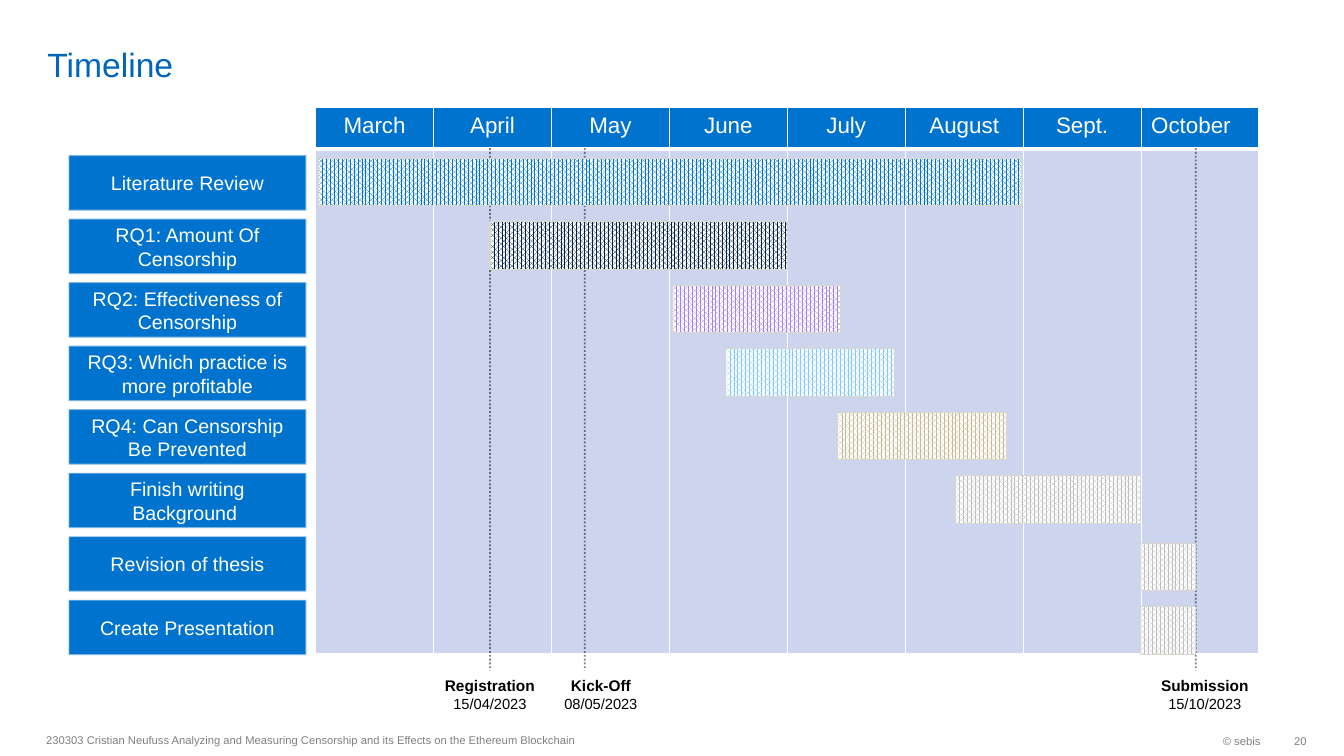
from dataclasses import dataclass

from lxml import etree
from pptx import Presentation
from pptx.dml.color import RGBColor
from pptx.enum.dml import MSO_LINE, MSO_PATTERN
from pptx.enum.shapes import MSO_CONNECTOR, MSO_SHAPE
from pptx.enum.text import MSO_ANCHOR, MSO_AUTO_SIZE, PP_ALIGN
from pptx.oxml.ns import qn
from pptx.util import Inches, Pt

LEFT, CENTER, RIGHT = PP_ALIGN.LEFT, PP_ALIGN.CENTER, PP_ALIGN.RIGHT
MIDDLE, BOTTOM = MSO_ANCHOR.MIDDLE, MSO_ANCHOR.BOTTOM
RECTANGLE = MSO_SHAPE.RECTANGLE
STRAIGHT = MSO_CONNECTOR.STRAIGHT
DOTTED = MSO_LINE.ROUND_DOT
DENSE_DOTS = MSO_PATTERN.PERCENT_75


@dataclass(frozen=True)
class Theme:
    font: str = "Arial"
    title: str = "0065BD"
    blue: str = "0073CF"
    navy: str = "002143"
    purple: str = "A484EB"
    sky: str = "86C9FF"
    sand: str = "C4BD97"
    silver: str = "C0C0C0"
    month: str = "CCD5ED"
    bar_edge: str = "DAD7CB"
    label_edge: str = "F9F9F9"
    footer: str = "808080"
    white: str = "FFFFFF"
    black: str = "000000"
    title_size: float = 24
    month_size: float = 16
    label_size: float = 14
    milestone_size: float = 11
    date_size: float = 10.5
    footer_size: float = 8


THEME = Theme()


def write(para, text, *, size, color, bold=False, align=LEFT):
    para.alignment = align
    span = para.add_run()
    span.text = text
    span.font.name = THEME.font
    span.font.size = Pt(size)
    span.font.bold = bold
    span.font.color.rgb = RGBColor.from_string(color)


def draw_faded_line(shape, color):
    """Give the shape a half-transparent outline."""
    shape.line.color.rgb = RGBColor.from_string(color)
    shape.line.width = Pt(1.35)
    tint = shape._element.spPr.find(".//" + qn("a:ln") + "//" + qn("a:srgbClr"))
    etree.SubElement(tint, qn("a:alpha")).set("val", "50000")


deck = Presentation()
deck.slide_width, deck.slide_height = Inches(13.33), Inches(7.5)
page = deck.slides.add_slide(deck.slide_layouts[5])
shapes = page.shapes

# Title
title = shapes.title
title.left, title.top = Inches(0.37), Inches(0.05)
title.width, title.height = Inches(11.58), Inches(0.79)
frame = title.text_frame
frame.auto_size = MSO_AUTO_SIZE.NONE
frame.vertical_anchor = BOTTOM
frame.margin_left = frame.margin_right = Inches(0.1)
frame.margin_top = frame.margin_bottom = 0
write(frame.paragraphs[0], "Timeline", size=THEME.title_size, color=THEME.title)

# Month grid
MONTHS = ["March", "April", "May", "June", "July", "August", "Sept.", "October"]
HEADER_HEIGHT, BODY_HEIGHT = 0.41, 5.0
calendar = shapes.add_table(
    2, len(MONTHS), Inches(3.13), Inches(1.07),
    Inches(9.36), Inches(HEADER_HEIGHT + BODY_HEIGHT),
).table
calendar.horz_banding = False
calendar.rows[0].height = Inches(HEADER_HEIGHT)
calendar.rows[1].height = Inches(BODY_HEIGHT)
ROW_STYLES = [
    (THEME.blue, {"lnL": 1, "lnR": 1, "lnT": 1, "lnB": 3}),
    (THEME.month, {"lnL": 1, "lnR": 1, "lnT": 3, "lnB": 1}),
]
for column, month in enumerate(MONTHS):
    for row, (color, borders) in enumerate(ROW_STYLES):
        cell = calendar.cell(row, column)
        properties = cell._tc.get_or_add_tcPr()
        for side, width in borders.items():
            border = etree.SubElement(properties, qn(f"a:{side}"), w=str(Pt(width)))
            solid = etree.SubElement(border, qn("a:solidFill"))
            etree.SubElement(solid, qn("a:srgbClr"), val=THEME.white)
        cell.fill.solid()
        cell.fill.fore_color.rgb = RGBColor.from_string(color)
    write(calendar.cell(0, column).text_frame.paragraphs[0], month,
          size=THEME.month_size, color=THEME.white,
          align=LEFT if month == "October" else CENTER)

# Footer
FOOTER = [
    ("© sebis", 10.26, 7.19, 2.34, RIGHT, 0.1),
    ("230303 Cristian Neufuss Analyzing and Measuring Censorship and its Effects "
     "on the Ethereum Blockchain", 0.36, 7.18, 6.3, LEFT, 0.1),
    ("20", 12.6, 7.19, 0.36, RIGHT, 0),
]
for text, left, top, width, align, right_margin in FOOTER:
    box = shapes.add_textbox(Inches(left), Inches(top), Inches(width), Inches(0.32))
    frame = box.text_frame
    frame.word_wrap = True
    frame.vertical_anchor = MIDDLE
    frame.margin_right = Inches(right_margin)
    write(frame.paragraphs[0], text, size=THEME.footer_size,
          color=THEME.footer, align=align)

# Milestones: name, date, line position, label left and width
MILESTONES = [
    ("Registration", "15/04/2023", 4.86, 4.31, 1.1),
    ("Kick-Off", "08/05/2023", 5.8, 5.49, 0.94),
    ("Submission", "15/10/2023", 11.86, 11.41, 1.08),
]
for name, date, position, left, width in MILESTONES:
    marker = shapes.add_connector(
        STRAIGHT, Inches(position), Inches(1.47), Inches(position), Inches(6.65))
    draw_faded_line(marker, THEME.black)
    marker.line.dash_style = DOTTED
    etree.SubElement(marker._element.spPr, qn("a:effectLst"))
    box = shapes.add_textbox(Inches(left), Inches(6.66), Inches(width), Inches(0.46))
    frame = box.text_frame
    frame.word_wrap = False
    write(frame.paragraphs[0], name, size=THEME.milestone_size,
          color=THEME.black, bold=True, align=CENTER)
    write(frame.add_paragraph(), date, size=THEME.date_size,
          color=THEME.black, align=CENTER)

# Tasks: label, bar left, bar width, bar colour, bar offset below the label top
TASKS = [
    ("Literature Review", 3.16, 6.97, THEME.blue, 0.03),
    ("RQ1: Amount Of Censorship", 4.86, 2.95, THEME.navy, 0.03),
    ("RQ2: Effectiveness of Censorship", 6.67, 1.67, THEME.purple, 0.03),
    ("RQ3: Which practice is more profitable", 7.2, 1.67, THEME.sky, 0.03),
    ("RQ4: Can Censorship Be Prevented", 8.31, 1.67, THEME.sand, 0.03),
    ("Finish writing Background ", 9.48, 1.83, THEME.silver, 0.03),
    ("Revision of thesis", 11.31, 0.55, THEME.silver, 0.07),
    ("Create Presentation", 11.31, 0.55, THEME.silver, 0.07),
]
FIRST_TASK_TOP, TASK_STEP = 1.54, 0.63
for index, (name, left, width, color, offset) in enumerate(TASKS):
    top = FIRST_TASK_TOP + index * TASK_STEP
    label = shapes.add_shape(
        RECTANGLE, Inches(0.68), Inches(top), Inches(2.36), Inches(0.55))
    label.shadow.inherit = False
    label.fill.solid()
    label.fill.fore_color.rgb = RGBColor.from_string(THEME.blue)
    draw_faded_line(label, THEME.label_edge)
    label.text_frame.word_wrap = True
    label.text_frame.vertical_anchor = MIDDLE
    write(label.text_frame.paragraphs[0], name, size=THEME.label_size,
          color=THEME.white, align=CENTER)

    bar = shapes.add_shape(
        RECTANGLE, Inches(left), Inches(top + offset), Inches(width), Inches(0.47))
    bar.shadow.inherit = False
    bar.fill.patterned()
    bar.fill.pattern = DENSE_DOTS
    bar.fill.fore_color.rgb = RGBColor.from_string(color)
    bar.fill.back_color.rgb = RGBColor.from_string(THEME.white)
    bar.line.color.rgb = RGBColor.from_string(THEME.bar_edge)
    bar.line.width = Pt(0.75)

deck.save("out.pptx")
